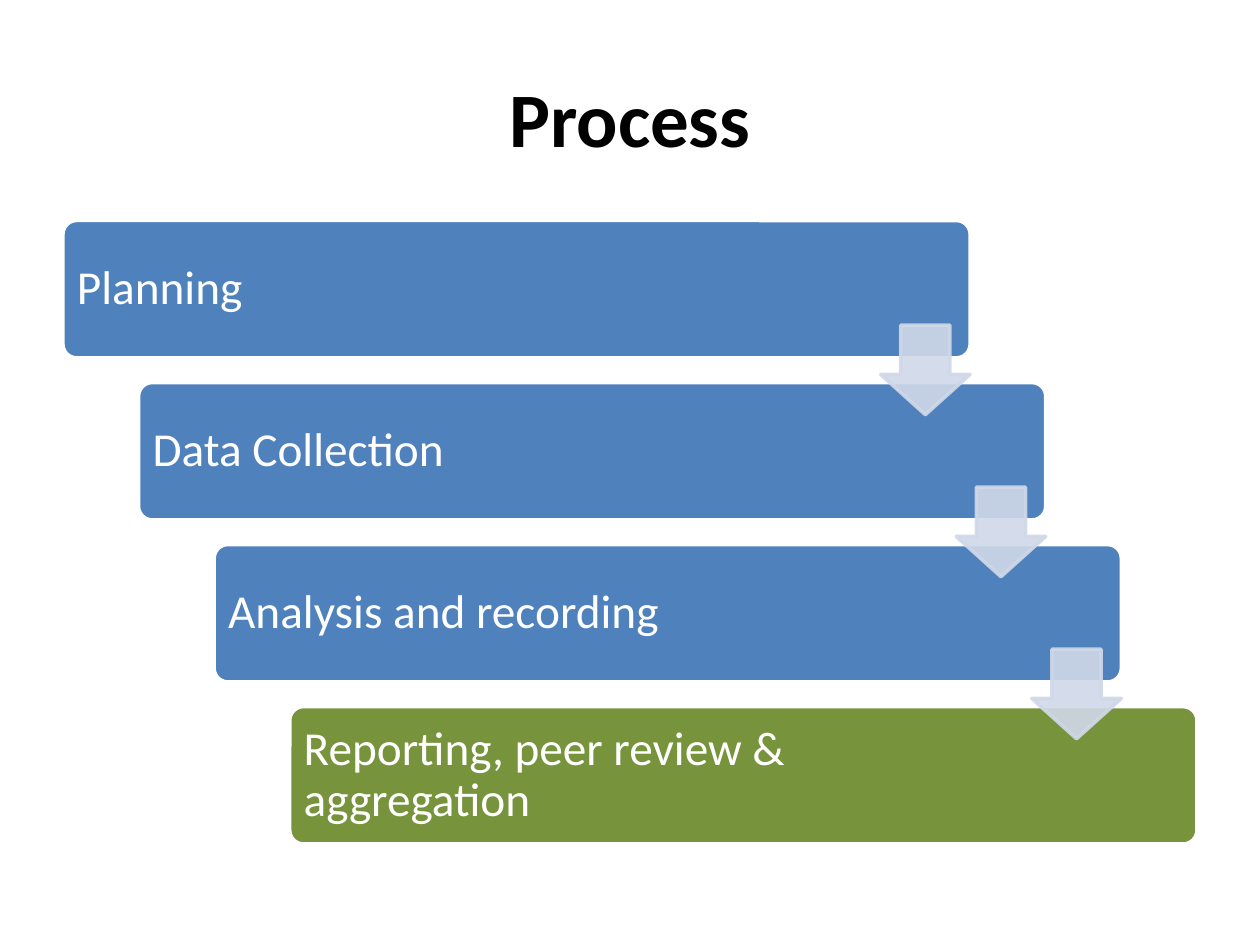
from lxml import etree
from pptx import Presentation
from pptx.dml.color import RGBColor
from pptx.enum import shapes, text
from pptx.oxml.ns import qn
from pptx.util import Pt

HUES = {"ink": "000000", "white": "FFFFFF", "blue": "4F81BD",
        "green": "77933C", "pale": "D0D8E8"}
STEPS = [("Planning", "blue"), ("Data Collection", "blue"),
         ("Analysis and recording", "blue"),
         ("Reporting, peer review & aggregation", "green")]

# Staircase measures, in points
LEFT, TOP = 36, 126
RIGHT, DOWN = 43.2, 92.6
WIDE, HIGH = 518.4, 78.5
ARROW = 51.2


def hue(name):
    return RGBColor.from_string(HUES[name])


def style(font, size, color, bold=False):
    font.name, font.size, font.bold = "Calibri", Pt(size), bold
    font.color.rgb = hue(color)


def add_form(slide, kind, box, fill, line, ratios):
    form = slide.shapes.add_shape(kind, *map(Pt, box))
    form.shadow.inherit = False
    form.fill.solid()
    form.fill.fore_color.rgb = hue(fill)
    form.line.color.rgb = hue(line)
    form.line.width = Pt(2)
    for i, ratio in enumerate(ratios):
        form.adjustments[i] = ratio
    return form


def add_title(slide, words):
    title = slide.shapes.title
    title.left, title.top, title.width, title.height = map(Pt, (36, 21.6, 648, 90))
    frame = title.text_frame
    frame.text = words
    frame.vertical_anchor = text.MSO_ANCHOR.MIDDLE
    para = frame.paragraphs[0]
    para.alignment = text.PP_ALIGN.CENTER
    style(para.font, 44, "ink", True)


def add_bar(slide, x, y, words, fill):
    bar = add_form(slide, shapes.MSO_SHAPE.ROUNDED_RECTANGLE,
                   (x, y, WIDE, HIGH), fill, "white", [0.1])
    frame = bar.text_frame
    frame.word_wrap = True
    frame.vertical_anchor = text.MSO_ANCHOR.MIDDLE
    frame.margin_left = frame.margin_top = frame.margin_bottom = Pt(5.7)
    frame.margin_right = Pt(100)  # keeps the words clear of the arrows
    frame.text = words
    para = frame.paragraphs[0]
    para.alignment = text.PP_ALIGN.LEFT
    para.line_spacing = 0.9
    style(para.font, 27, "white")


def add_arrow(slide, x, y):
    arrow = add_form(slide, shapes.MSO_SHAPE.DOWN_ARROW,
                     (x, y, ARROW, ARROW), "pale", "pale", [0.55, 0.45])
    # Fill and line are slightly see-through
    for color in arrow._element.spPr.iter(qn("a:srgbClr")):
        etree.SubElement(color, qn("a:alpha"), val="90000")


def main():
    deck = Presentation()
    deck.slide_width, deck.slide_height = Pt(720), Pt(540)
    slide = deck.slides.add_slide(deck.slide_layouts[5])
    add_title(slide, "Process")

    # Bars first, so that the arrows lie on top
    spots = [(LEFT + i * RIGHT, TOP + i * DOWN) for i in range(len(STEPS))]
    for (x, y), (words, fill) in zip(spots, STEPS):
        add_bar(slide, x, y, words, fill)
    for x, y in spots[:-1]:
        add_arrow(slide, x + WIDE - ARROW, y + 59.8)

    deck.save("out.pptx")


if __name__ == "__main__":
    main()
